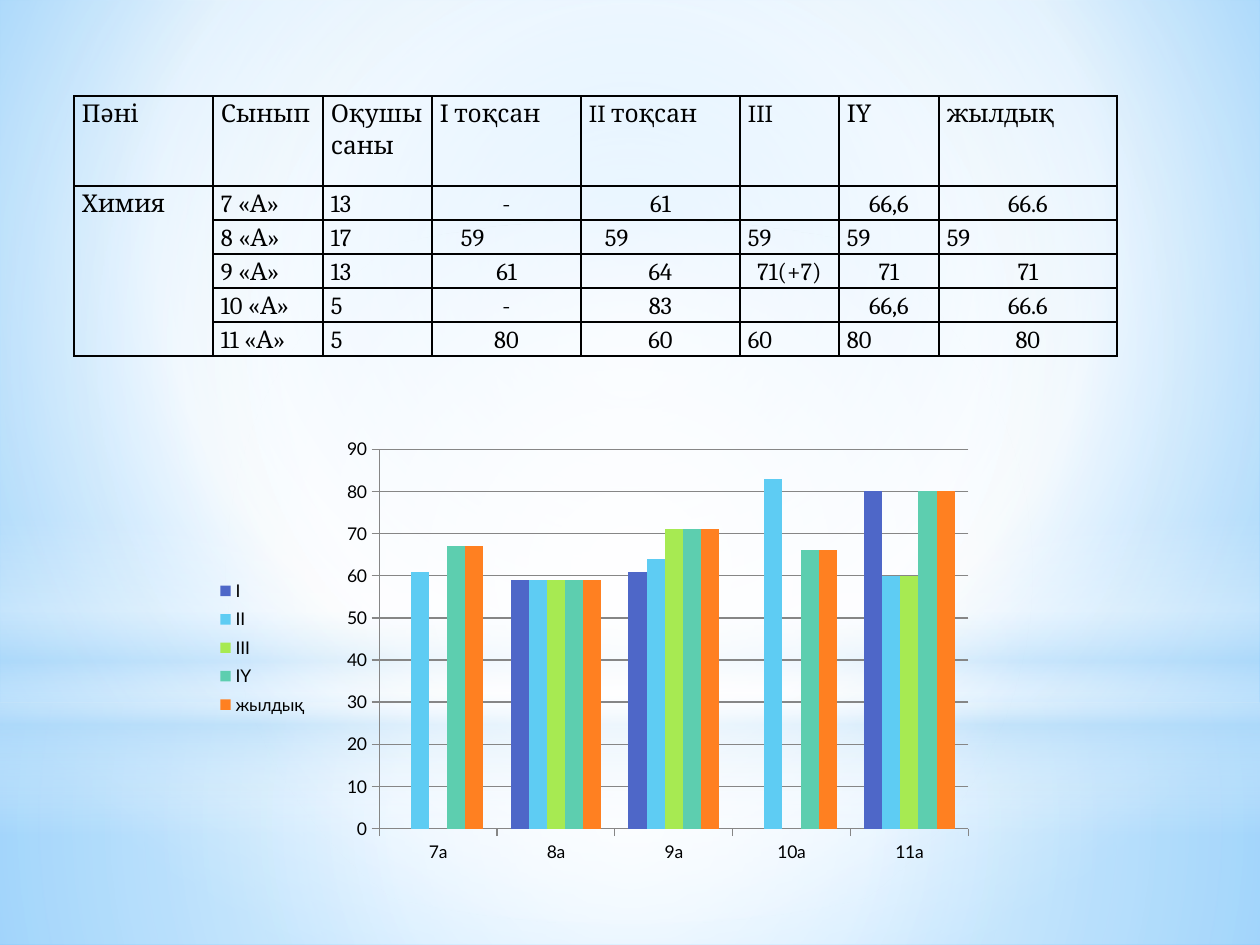
from lxml import etree
from pptx import Presentation, util as u
from pptx.chart.data import CategoryChartData
from pptx.dml.color import RGBColor
from pptx.enum import chart as ec, shapes, text
from pptx.oxml import parse_xml
from pptx.oxml.ns import nsdecls, qn

SCALE = 914400 / 126


def px(*values):
    return [u.Emu(round(v * SCALE)) for v in values]


def gradient(owner, fill, stops, shade):
    fill.gradient()
    old = next(owner.iter(qn("a:gradFill")))
    gs = "".join(
        f'<a:gs pos="{pos * 1000}"><a:srgbClr val="{color}">'
        f'<a:alpha val="{alpha * 1000}"/></a:srgbClr></a:gs>'
        for pos, color, alpha in stops)
    new = parse_xml(f'<a:gradFill {nsdecls("a")} rotWithShape="1">'
                    f'<a:gsLst>{gs}</a:gsLst>{shade}</a:gradFill>')
    old.getparent().replace(old, new)


rgb = RGBColor.from_string
circle = '<a:path path="circle"><a:fillToRect l="{}000" t="{}000" r="{}000" b="{}000"/></a:path>'
centre = circle.format(50, 50, 50, 50)

prs = Presentation()
prs.slide_width, prs.slide_height = px(1260, 945)
s = prs.slides.add_slide(prs.slide_layouts[6])
gradient(s.element, s.background.fill,
         [(0, "9ED5FF", 100), (60, "FFFFFF", 100), (100, "5BB9FF", 100)],
         circle.format(20, 10, 20, 60))

rect, oval = shapes.MSO_SHAPE.RECTANGLE, shapes.MSO_SHAPE.OVAL
glows = [
    (rect, 703, 242, [(0, "FFFFFF", 91), (37, "FFFFFF", 76), (100, "B4DCFA", 79)], centre),
    (rect, 0, 703, [(0, "FFFFFF", 89), (48, "FFFFFF", 62), (100, "B4DCFA", 79)], centre),
    (rect, 519, 315, [(0, "FFFFFF", 0), (29, "FFFFFF", 30), (45, "B4DCFA", 40),
                      (55, "FFFFFF", 26), (65, "B4DCFA", 60), (100, "FFFFFF", 0)],
     '<a:lin ang="5400000" scaled="0"/>'),
    (oval, 220, 703, [(0, "FFFFFF", 100), (56, "FFFFFF", 0)], centre),
]
for kind, top, height, stops, shade in glows:
    sp = s.shapes.add_shape(kind, *px(0, top, 1260, height))
    sp.shadow.inherit = False
    sp.line.fill.background()
    gradient(sp.element, sp.fill, stops, shade)

rows = [
    ["Пәні", "Сынып", "Оқушы саны", "І тоқсан", "II тоқсан", "III", "ІҮ", "жылдық"],
    ["Химия", "7 «А»", "13", "-", "61", "", "66,6", "66.6"],
    ["", "8 «А»", "17", "59", "59", "59", "59", "59"],
    ["", "9 «А»", "13", "61", "64", "71(+7)", "71", "71"],
    ["", "10 «А»", "5", "-", "83", "", "66,6", "66.6"],
    ["", "11 «А»", "5", "80", "60", "60", "80", "80"],
]
centred = {1: (3, 4, 6, 7), 3: (3, 4, 5, 6, 7), 4: (3, 4, 6, 7), 5: (3, 4, 7)}
indents = {(2, 3): 29, (2, 4): 24}
widths = [139, 110, 109, 149, 159, 99, 100, 178]
heights = [90] + [34] * 5

table = s.shapes.add_table(len(rows), len(widths),
                           *px(74, 96, sum(widths), sum(heights))).table
table.first_row = table.horz_banding = False
for column, width in zip(table.columns, px(*widths)):
    column.width = width
for row, height in zip(table.rows, px(*heights)):
    row.height = height

for i, row in enumerate(rows):
    for j, value in enumerate(row):
        cell = table.cell(i, j)
        margins = px(indents.get((i, j), 8), 8, 0, 0)
        for side, margin in zip(("left", "right", "top", "bottom"), margins):
            setattr(cell, f"margin_{side}", margin)
        p = cell.text_frame.paragraphs[0]
        p.line_spacing = 1.15
        if j in centred.get(i, ()):
            p.alignment = text.PP_ALIGN.CENTER
        if value:
            r = p.add_run()
            r.text = value
            r.font.name, r.font.size = "Cambria", u.Pt(14)
            r.font.color.rgb = rgb("000000")
        else:
            etree.SubElement(p._p, qn("a:endParaRPr"), sz="1400")
        tc_pr = cell._tc.get_or_add_tcPr()
        for side in "LRTB":
            tc_pr.append(parse_xml(
                f'<a:ln{side} {nsdecls("a")} w="12700"><a:solidFill>'
                f'<a:srgbClr val="000000"/></a:solidFill></a:ln{side}>'))
        cell.fill.background()
table.cell(1, 0).merge(table.cell(5, 0))

data = CategoryChartData()
data.categories = ["7а", "8а", "9а", "10а", "11а"]
series = [
    ("І", "4E67C8", (None, 59, 61, None, 80)),
    ("ІІ", "5ECCF3", (61, 59, 64, 83, 60)),
    ("ІІІ", "A7EA52", (None, 59, 71, None, 60)),
    ("ІҮ", "5DCEAF", (67, 59, 71, 66, 80)),
    ("жылдық", "FF8021", (67, 59, 71, 66, 80)),
]
for name, color, values in series:
    data.add_series(name, values)
chart = s.shapes.add_chart(ec.XL_CHART_TYPE.COLUMN_CLUSTERED,
                           *px(213, 423, 756, 441), data).chart
chart.has_title = False
chart.font.name, chart.font.size = "Lato", u.Pt(10)
chart.font.color.rgb = rgb("000000")

plot = chart.plots[0]
plot.gap_width, plot.overlap, plot.vary_by_categories = 150, 0, False
for ser, (name, color, values) in zip(plot.series, series):
    ser.format.fill.solid()
    ser.format.fill.fore_color.rgb = rgb(color)

value_axis = chart.value_axis
value_axis.minimum_scale, value_axis.maximum_scale, value_axis.major_unit = 0, 90, 10
value_axis.has_major_gridlines = True
for part in (value_axis, chart.category_axis, value_axis.major_gridlines):
    part.format.line.color.rgb = rgb("868686")
    part.format.line.width = u.Pt(0.75)
for axis in (value_axis, chart.category_axis):
    axis.major_tick_mark = ec.XL_TICK_MARK.OUTSIDE
    axis.minor_tick_mark = ec.XL_TICK_MARK.NONE

chart.has_legend = True
legend = chart.legend
legend.position = ec.XL_LEGEND_POSITION.RIGHT
legend.include_in_layout = False

layouts = [
    (chart._chartSpace.chart.plotArea, 0, '<c:layoutTarget val="inner"/>',
     {"x": 0.22, "y": 0.06, "w": 0.78, "h": 0.86}),
    (legend._element, 1, "", {"x": 0, "y": 0.34, "w": 0.13, "h": 0.34}),
]
for owner, index, target, frame in layouts:
    for old in owner.findall(qn("c:layout")):
        owner.remove(old)
    modes = "".join(f'<c:{k}Mode val="edge"/>' for k in "xy")
    sizes = "".join(f'<c:{k} val="{v}"/>' for k, v in frame.items())
    owner.insert(index, parse_xml(
        f'<c:layout {nsdecls("c")}><c:manualLayout>{target}{modes}{sizes}'
        '</c:manualLayout></c:layout>'))

prs.save("out.pptx")
